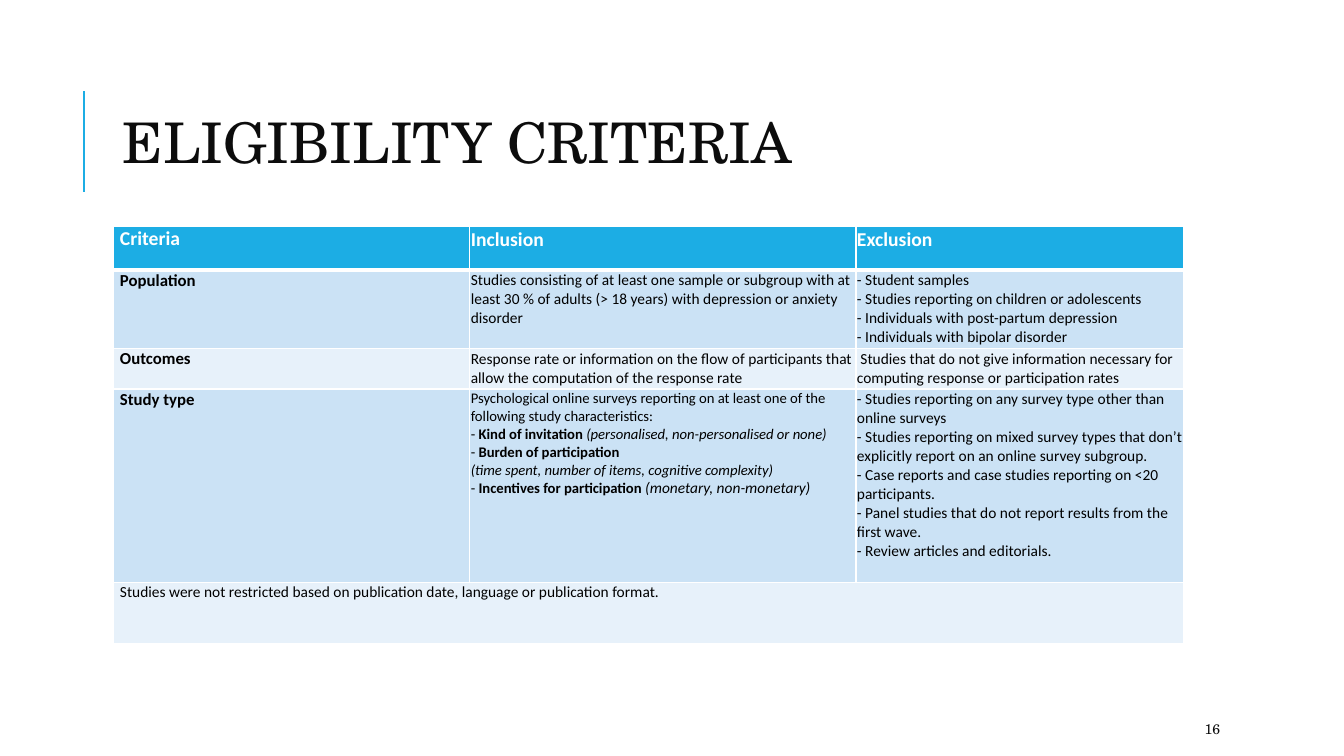
from dataclasses import dataclass

from lxml import etree
from pptx import Presentation
from pptx.dml.color import RGBColor
from pptx.enum.shapes import MSO_CONNECTOR
from pptx.enum.text import MSO_ANCHOR
from pptx.oxml.ns import qn
from pptx.util import Pt

STRAIGHT = MSO_CONNECTOR.STRAIGHT
MIDDLE, TOP = MSO_ANCHOR.MIDDLE, MSO_ANCHOR.TOP
EMU_PER_PX = 9144  # 100 px to the inch
BLANK = 6


@dataclass(frozen=True)
class Theme:
    accent: str = "1CADE4"
    band_dark: str = "CBE2F5"
    band_light: str = "E7F1FA"
    white: str = "FFFFFF"
    black: str = "000000"
    ink: str = "0C0C0C"
    serif: str = "TeX Gyre Schola"
    sans: str = "Calibri"
    title: float = 40
    header: float = 14
    label: float = 12
    body: float = 11
    detail: float = 10.5
    number: float = 10


T = Theme()
COL_WIDTHS = (354, 383, 325)
ROW_HEIGHTS = (43, 78, 40, 192, 61)
HEADERS = ("Criteria", "Inclusion", "Exclusion")
BOLD, ITALIC = {"bold": True}, {"italic": True}

# Each cell is a list of paragraphs; a paragraph is a string or a list of (text, format)
CRITERIA = (
    ("Population",
     ["Studies consisting of at least one sample or subgroup with at least 30 % of adults "
      "(> 18 years) with depression or anxiety disorder"],
     ["- Student samples",
      "- Studies reporting on children or adolescents",
      "- Individuals with post-partum depression",
      "- Individuals with bipolar disorder"]),
    ("Outcomes",
     ["Response rate or information on the flow of participants that allow the computation "
      "of the response rate"],
     [" Studies that do not give information necessary for computing response or "
      "participation rates"]),
    ("Study type",
     ["Psychological online surveys reporting on at least one of the following study "
      "characteristics:",
      [("- ", {}), ("Kind of invitation ", BOLD),
       ("(personalised, non-personalised or none)", ITALIC)],
      [("- ", {}), ("Burden of participation", BOLD)],
      [("(time spent, number of items, cognitive complexity)", ITALIC)],
      [("- ", {}), ("Incentives for participation ", BOLD),
       ("(monetary, non-monetary)", {"italic": True, "size": T.body})]],
     ["- Studies reporting on any survey type other than online surveys",
      "- Studies reporting on mixed survey types that don’t explicitly report on an online "
      "survey subgroup.",
      "- Case reports and case studies reporting on <20 participants.",
      "- Panel studies that do not report results from the first wave.",
      "- Review articles and editorials."]),
)
FOOTNOTE = "Studies were not restricted based on publication date, language or publication format."


def px(n):
    return n * EMU_PER_PX


def rgb(color):
    return RGBColor.from_string(color)


def add_run(p, text, *, size, color, font, bold=False, italic=False):
    r = p.add_run()
    r.text = text
    r.font.size, r.font.name = Pt(size), font
    r.font.bold, r.font.italic = bold, italic
    r.font.color.rgb = rgb(color)


def write(tf, paragraphs, spacing=None, **fmt):
    """Fill a text frame with paragraphs; a run's own format overrides fmt."""
    for i, runs in enumerate(paragraphs):
        p = tf.paragraphs[0] if i == 0 else tf.add_paragraph()
        if spacing:
            p.line_spacing = spacing
        for text, own in [(runs, {})] if isinstance(runs, str) else runs:
            add_run(p, text, **{**fmt, **own})


def add_text(slide, x, y, w, h, text, **fmt):
    tf = slide.shapes.add_textbox(px(x), px(y), px(w), px(h)).text_frame
    tf.word_wrap = True
    tf.vertical_anchor = MIDDLE
    write(tf, [text], **fmt)


def add_rule(slide, x1, y1, x2, y2):
    line = slide.shapes.add_connector(STRAIGHT, px(x1), px(y1), px(x2), px(y2))
    line.line.color.rgb = rgb(T.accent)
    line.line.width = Pt(1.5)
    etree.SubElement(line._element.spPr, qn("a:effectLst"))


def set_borders(cell, **widths):
    """Draw white borders; widths in points are keyed L, R, T, B."""
    tcPr = cell._tc.get_or_add_tcPr()
    for i, side in enumerate("LRTB"):
        ln = etree.Element(qn(f"a:ln{side}"), w=str(Pt(widths.get(side, 1))))
        fill = etree.SubElement(ln, qn("a:solidFill"))
        etree.SubElement(fill, qn("a:srgbClr"), val=T.white)
        tcPr.insert(i, ln)


def fill_cell(table, row, col, paragraphs, fill, **fmt):
    cell = table.cell(row, col)
    side, edge = (7, 0) if col == 0 else (1, 1)
    cell.margin_left = cell.margin_right = px(side)
    cell.margin_top = cell.margin_bottom = px(edge)
    cell.vertical_anchor = TOP
    cell.fill.solid()
    cell.fill.fore_color.rgb = rgb(fill)
    set_borders(cell, **{0: {"B": 3}, 1: {"T": 3}}.get(row, {}))
    write(cell.text_frame, paragraphs, font=T.sans, **fmt)


def add_criteria_table(slide, x, y):
    table = slide.shapes.add_table(len(ROW_HEIGHTS), len(COL_WIDTHS), px(x), px(y),
                                   px(sum(COL_WIDTHS)), px(sum(ROW_HEIGHTS))).table
    for column, w in zip(table.columns, COL_WIDTHS):
        column.width = px(w)
    for row, h in zip(table.rows, ROW_HEIGHTS):
        row.height = px(h)

    # Header row
    for col, header in enumerate(HEADERS):
        fill_cell(table, 0, col, [header], T.accent, size=T.header, color=T.white, bold=True)

    # Criteria rows in alternating bands
    for row, (label, inclusion, exclusion) in enumerate(CRITERIA, 1):
        band = T.band_dark if row % 2 else T.band_light
        inclusion_size = T.detail if label == "Study type" else T.body
        fill_cell(table, row, 0, [label], band, size=T.label, color=T.black, bold=True)
        fill_cell(table, row, 1, inclusion, band, size=inclusion_size, color=T.black)
        fill_cell(table, row, 2, exclusion, band, size=T.body, color=T.black)

    # Footnote across all columns
    last = len(ROW_HEIGHTS) - 1
    table.cell(last, 0).merge(table.cell(last, len(COL_WIDTHS) - 1))
    fill_cell(table, last, 0, [FOOTNOTE], T.band_light, size=T.body, color=T.black)


def main():
    prs = Presentation()
    prs.slide_width, prs.slide_height = px(1333), px(750)
    slide = prs.slides.add_slide(prs.slide_layouts[BLANK])

    # Title with its accent rule
    add_rule(slide, 83, 190, 83, 90)
    add_text(slide, 112, 64, 1063, 164, "ELIGIBILITY CRITERIA", spacing=0.8,
             size=T.title, color=T.ink, font=T.serif)

    # Criteria table
    add_criteria_table(slide, 112, 225)

    # Page number
    add_text(slide, 1185, 708, 106, 30, "16", size=T.number, color=T.ink, font=T.serif)

    prs.save("out.pptx")


if __name__ == "__main__":
    main()
